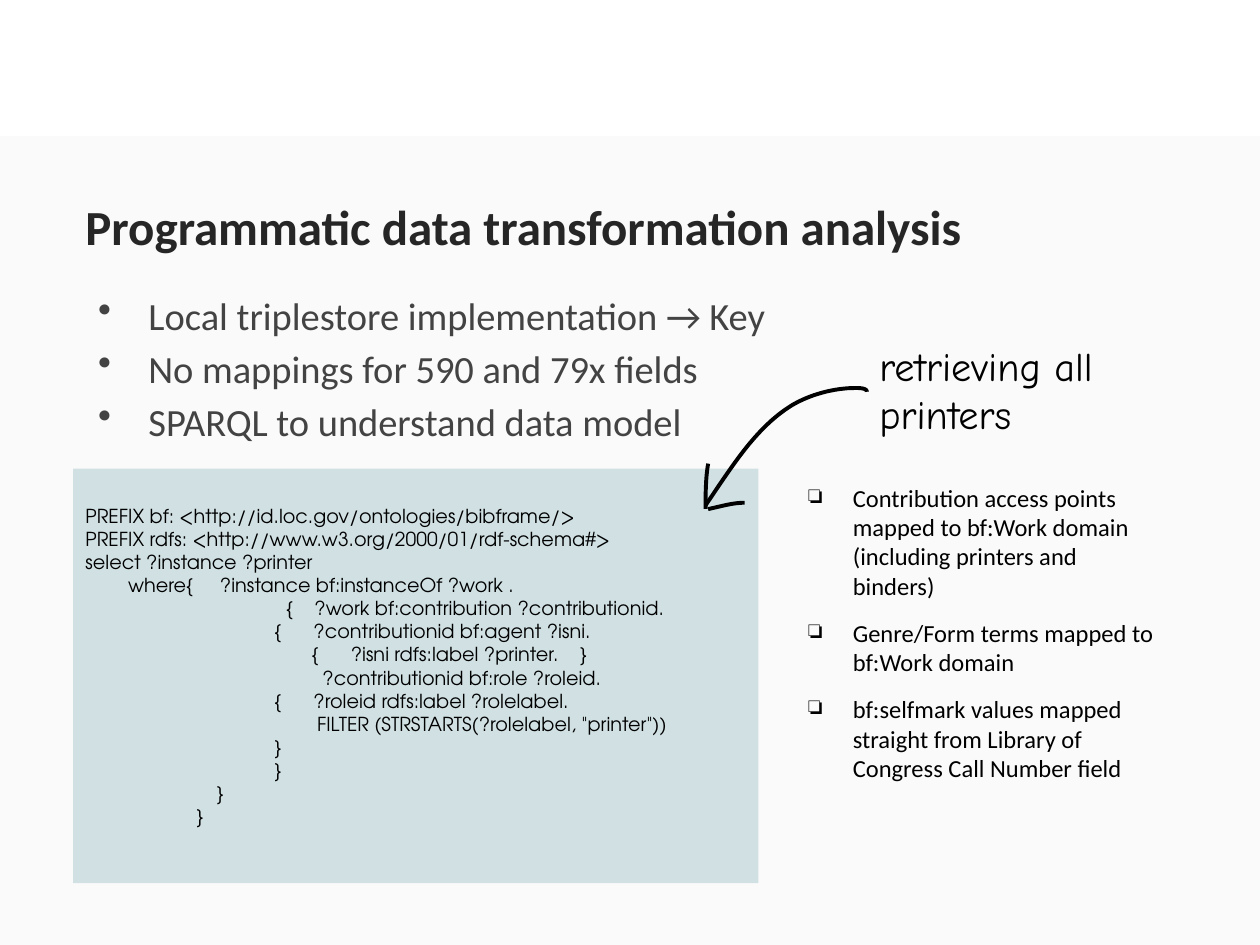
"""Build the slide on SPARQL and programmatic data transformation analysis."""
from lxml import etree
from pptx import Presentation
from pptx.dml.color import RGBColor
from pptx.enum.shapes import MSO_SHAPE as SHAPE
from pptx.enum.text import MSO_ANCHOR as ANCHOR, PP_ALIGN as ALIGN
from pptx.oxml.ns import qn
from pptx.util import Inches, Pt


def rgb(value):
    return RGBColor.from_string(value)


def write(sp, lines, font, color="000000", para=None, frame=None, bullet=None, indent=0):
    tf = sp.text_frame
    frame = {"word_wrap": True, "vertical_anchor": ANCHOR.TOP} | (frame or {})
    for name, value in frame.items():
        setattr(tf, name, value)
    for i, line in enumerate(lines):
        p = tf.paragraphs[0] if i == 0 else tf.add_paragraph()
        if bullet:
            pPr = p._p.get_or_add_pPr()
            pPr.set("marL", str(5 * U))
            pPr.set("indent", str(int(-indent * U)))
            clr = etree.SubElement(pPr, qn("a:buClr"))
            etree.SubElement(clr, qn("a:srgbClr"), val=color)
            etree.SubElement(pPr, qn("a:buChar"), char=bullet)
        for name, value in ({"alignment": ALIGN.LEFT} | (para or {})).items():
            if name != "space_before" or i:
                setattr(p, name, value)
        r = p.add_run()
        r.text = line
        for name, value in font.items():
            setattr(r.font, name, value)
        r.font.color.rgb = rgb(color)


prs = Presentation()
prs.slide_width, prs.slide_height = Inches(10), Inches(7.5)
U = prs.slide_width // 100
s = prs.slides.add_slide(prs.slide_layouts[6])

panels = []
for x, y, w, h, fill in [(0, 10.8, 100, 64.2, "CDCDCD"), (5.8, 37.2, 54.4, 32.9, "D0E0E3")]:
    sp = s.shapes.add_shape(SHAPE.RECTANGLE, *(int(v * U) for v in (x, y, w, h)))
    sp.shadow.inherit = False
    sp.fill.solid()
    sp.fill.fore_color.rgb = rgb(fill)
    sp.line.fill.background()
    panels.append(sp)
backdrop, code_box = panels
tint = backdrop._element.spPr.find(qn("a:solidFill"))[0]
etree.SubElement(tint, qn("a:alpha"), val="9000")

code = [
    "PREFIX bf: <http://id.loc.gov/ontologies/bibframe/>",
    "PREFIX rdfs: <http://www.w3.org/2000/01/rdf-schema#>",
    "select ?instance ?printer",
    "        where{     ?instance bf:instanceOf ?work .",
    "            \t              {    ?work bf:contribution ?contributionid.",
    "          \t\t  \t{      ?contributionid bf:agent ?isni.",
    "                \t\t       {      ?isni rdfs:label ?printer.    }",
    "            \t\t         ?contributionid bf:role ?roleid.",
    "                \t\t{      ?roleid rdfs:label ?rolelabel.",
    "                \t\t        FILTER (STRSTARTS(?rolelabel, \"printer\"))",
    "                \t\t}",
    "        \t\t\t}",
    "             \t }",
    "        \t         }",
]
write(code_box, code, {"name": "TeX Gyre Adventor", "size": Pt(11)},
      frame={"margin_top": int(2.8 * U)})

texts = [
    ((5.8, 15, 86.7, 5.8), ["Programmatic data transformation analysis"],
     {"name": "Calibri", "size": Pt(28), "bold": True},
     {"color": "262626", "frame": {"vertical_anchor": ANCHOR.MIDDLE}}),
    ((5.8, 22.1, 67.6, 13.9),
     ["Local triplestore implementation → Key",
      "No mappings for 590 and 79x fields",
      "SPARQL to understand data model"],
     {"name": "Calibri", "size": Pt(22)},
     {"color": "434343", "para": {"line_spacing": 1.15}, "bullet": "•", "indent": 4}),
    ((68.8, 26.1, 28.8, 5.8), ["retrieving all printers"],
     {"name": "Comic Neue", "size": Pt(23)}, {"frame": {"margin_top": U}}),
    ((61.7, 37.3, 31.2, 32.9),
     ["Contribution access points mapped to bf:Work domain (including printers and binders)",
      "Genre/Form terms mapped to bf:Work domain",
      "bf:selfmark values mapped straight from Library of Congress Call Number field"],
     {"name": "Calibri", "size": Pt(14)},
     {"para": {"space_before": Pt(10)}, "frame": {"margin_top": U},
      "bullet": "❏", "indent": 3.5}),
]
for box, lines, font, options in texts:
    write(s.shapes.add_textbox(*(int(v * U) for v in box)), lines, font, **options)

strokes = [
    [(56, 40.1), (58, 37.2), (59.9, 34), (62.8, 32.2), (64.3, 31.3),
     (66.2, 30.8), (67.9, 30.8), (68.2, 30.8), (68.8, 30.8), (68.8, 31.1)],
    [(56.2, 36.8), (56, 38), (56, 39.2), (56, 40.4)],
    [(56.2, 40.4), (57.2, 40.2), (58.1, 39.9), (59.1, 39.9)],
]
STEPS = 16
for stroke in strokes:
    points = []
    for k in range(0, len(stroke) - 1, 3):
        for t in (n / STEPS for n in range(1, STEPS + 1)):
            weights = ((1 - t) ** 3, 3 * t * (1 - t) ** 2, 3 * t * t * (1 - t), t ** 3)
            points.append([sum(c * v[axis] for c, v in zip(weights, stroke[k:k + 4])) * U
                           for axis in (0, 1)])
    builder = s.shapes.build_freeform(*(int(v * U) for v in stroke[0]))
    builder.add_line_segments(points, close=False)
    sp = builder.convert_to_shape()
    sp.shadow.inherit = False
    sp.fill.background()
    sp.line.color.rgb = rgb("000000")
    sp.line.width = Pt(2.25)

prs.save("out.pptx")
